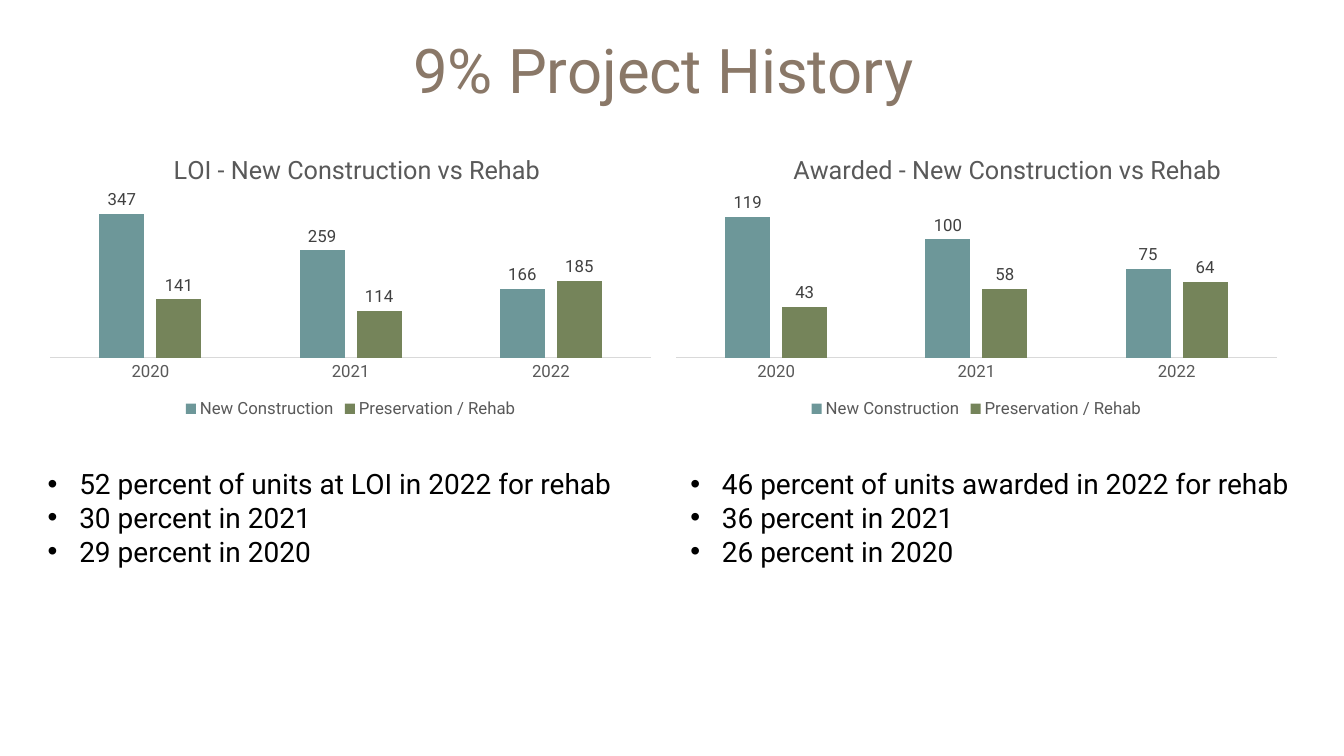
from dataclasses import dataclass

from lxml.etree import SubElement
from pptx import Presentation
from pptx.chart.data import CategoryChartData
from pptx.dml.color import RGBColor
from pptx.enum.chart import XL_CHART_TYPE, XL_LABEL_POSITION, XL_LEGEND_POSITION, XL_TICK_MARK
from pptx.enum.text import MSO_ANCHOR, MSO_AUTO_SIZE, PP_ALIGN
from pptx.oxml.ns import qn
from pptx.util import Pt


@dataclass(frozen=True)
class Theme:
    """Colours, type sizes and font of the slide."""
    face: str = "Roboto"
    head: str = "8A7868"
    body: str = "000000"
    grey: str = "595959"
    label: str = "404040"
    rule: str = "D9D9D9"
    bars: tuple = ("6D9799", "75845A")
    big: int = 44
    mid: int = 20
    cap: int = 18
    small: int = 12


LOOK = Theme()
YEARS = ("2020", "2021", "2022")
KINDS = ("New Construction", "Preservation / Rehab")
CHARTS = (
    ("LOI - New Construction vs Rehab", ((347, 259, 166), (141, 114, 185)), 400, (0.21, 0.05)),
    ("Awarded - New Construction vs Rehab", ((119, 100, 75), (43, 58, 64)), 140, (0.2, 0.05)),
)
NOTES = (
    ("52 percent of units at LOI in 2022 for rehab", "30 percent in 2021", "29 percent in 2020"),
    ("46 percent of units awarded in 2022 for rehab", "36 percent in 2021", "26 percent in 2020"),
)


def apply(item, form):
    """Set each attribute named in the dict."""
    for name, value in form.items():
        setattr(item, name, value)


def style(font, size, color):
    """Give a font its face, size and colour."""
    apply(font, {"name": LOOK.face, "size": Pt(size), "bold": False})
    font.color.rgb = RGBColor.from_string(color)


def pin(part, index, place):
    """Fix a chart part at fractions of the chart area."""
    for old in part.findall(qn("c:layout")):
        part.remove(old)
    layout = SubElement(part, qn("c:layout"))
    part.insert(index, layout)
    manual = SubElement(layout, qn("c:manualLayout"))
    for name, value in place.items():
        SubElement(manual, qn(f"c:{name}")).set("val", str(value))


def add_title(slide, text, box):
    """Place and format the slide title."""
    title = slide.shapes.title
    apply(title, dict(zip(("left", "top", "width", "height"), map(Pt, box))))
    frame = title.text_frame
    apply(frame, {"text": text, "vertical_anchor": MSO_ANCHOR.MIDDLE, "word_wrap": True})
    line = frame.paragraphs[0]
    line.alignment = PP_ALIGN.CENTER
    style(line.runs[0].font, LOOK.big, LOOK.head)


def add_bars(slide, text, rows, top, spot, box):
    """Draw one titled column chart in its box."""
    data = CategoryChartData()
    data.categories = YEARS
    for kind, row in zip(KINDS, rows):
        data.add_series(kind, row)
    chart = slide.shapes.add_chart(XL_CHART_TYPE.COLUMN_CLUSTERED, *map(Pt, box), data).chart
    style(chart.font, LOOK.small, LOOK.grey)

    apply(chart, {"has_title": True, "has_legend": True})
    title = chart.chart_title
    title.text_frame.text = text
    style(title.text_frame.paragraphs[0].runs[0].font, LOOK.cap, LOOK.grey)
    edge = {"xMode": "edge", "yMode": "edge"}
    pin(title._element, 1, {**edge, "x": spot[0], "y": spot[1]})
    pin(chart._chartSpace.xpath(".//c:plotArea")[0], 0,
        {"layoutTarget": "inner", **edge, "x": 0.02, "y": 0.2, "w": 0.96, "h": 0.575})

    apply(chart.legend, {"position": XL_LEGEND_POSITION.BOTTOM, "include_in_layout": False})
    style(chart.legend.font, LOOK.small, LOOK.grey)
    apply(chart.value_axis, {"visible": False, "has_major_gridlines": False,
                             "minimum_scale": 0, "maximum_scale": top})
    axis = chart.category_axis
    apply(axis, {"major_tick_mark": XL_TICK_MARK.NONE, "minor_tick_mark": XL_TICK_MARK.NONE})
    style(axis.tick_labels.font, LOOK.small, LOOK.grey)
    axis.format.line.width = Pt(0.75)
    axis.format.line.color.rgb = RGBColor.from_string(LOOK.rule)

    plot = chart.plots[0]
    apply(plot, {"gap_width": 219, "overlap": -27, "vary_by_categories": False})
    for bars, color in zip(plot.series, LOOK.bars):
        bars.format.fill.solid()
        bars.format.fill.fore_color.rgb = RGBColor.from_string(color)
        labels = bars.data_labels
        apply(labels, {"show_value": True, "position": XL_LABEL_POSITION.OUTSIDE_END})
        style(labels.font, LOOK.small, LOOK.label)


def add_notes(slide, lines, box):
    """Write a bulleted list in its box."""
    frame = slide.shapes.add_textbox(*map(Pt, box)).text_frame
    apply(frame, {"word_wrap": True, "auto_size": MSO_AUTO_SIZE.SHAPE_TO_FIT_TEXT,
                  "text": "\n".join(lines)})
    for line in frame.paragraphs:
        props = line._p.get_or_add_pPr()
        props.set("marL", str(int(Pt(22.5))))
        props.set("indent", str(int(Pt(-22.5))))
        SubElement(props, qn("a:buFont")).set("typeface", "Arial")
        SubElement(props, qn("a:buChar")).set("char", "•")
        style(line.runs[0].font, LOOK.mid, LOOK.body)


def add_history(deck):
    """Build the slide of two charts over two lists."""
    slide = deck.slides.add_slide(deck.slide_layouts[5])
    left, wide = 27, 447
    add_title(slide, "9% Project History", (left, 14, 2 * wide, 70))
    for i, chart in enumerate(CHARTS):
        add_bars(slide, *chart, (left + i * wide, 96, wide, 206))
    for i, lines in enumerate(NOTES):
        add_notes(slide, lines, (left + i * 459, 330, 459, 80))


def main():
    """Make and save the deck."""
    deck = Presentation()
    apply(deck, {"slide_width": Pt(960), "slide_height": Pt(540)})
    add_history(deck)
    deck.save("out.pptx")


if __name__ == "__main__":
    main()
